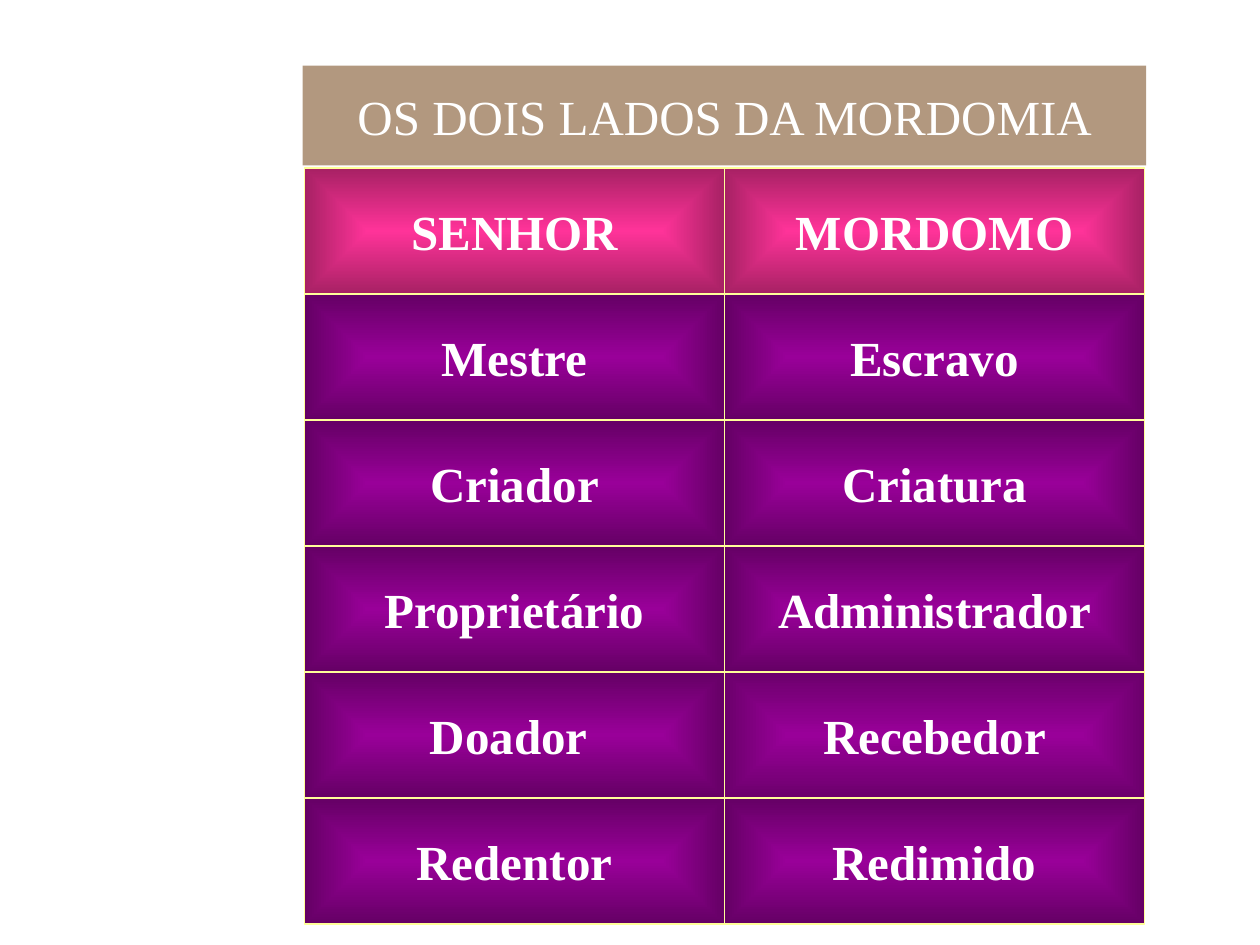
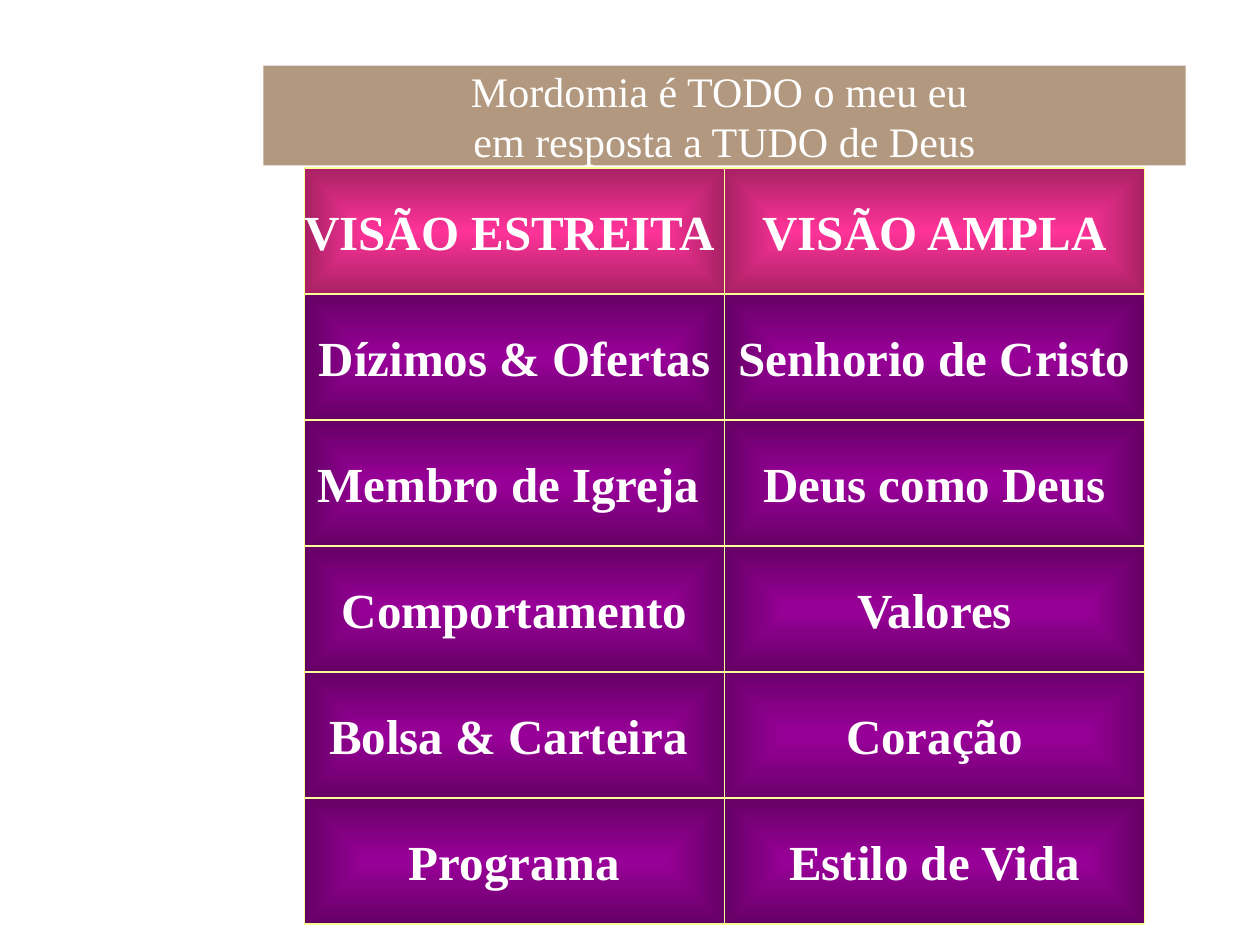
"""Build two slides that contrast the sides of stewardship in a two-column grid."""
from dataclasses import dataclass

import pptx
import pptx.dml.color
import pptx.enum.shapes
import pptx.enum.text
import pptx.oxml
import pptx.oxml.ns
import pptx.slide
import pptx.util

Pt = pptx.util.Pt
RGBColor = pptx.dml.color.RGBColor

WHITE = RGBColor(0xFF, 0xFF, 0xFF)
BROWN = RGBColor(0x66, 0x33, 0x00)
PINK = RGBColor(0xFF, 0x33, 0x99)
PURPLE = RGBColor(0x99, 0x00, 0x99)
CREAM = RGBColor(0xFF, 0xFF, 0x99)

FONT = "Times New Roman"
GRID_LEFT, GRID_TOP = 174, 96
CELL_WIDTH, CELL_HEIGHT = 240, 72
TITLE_TOP, TITLE_HEIGHT = 37.5, 57


@dataclass(frozen=True)
class CellStyle:
    """Centre colour of a cell and the shade, in percent, of its edge."""

    color: RGBColor
    edge_shade: int


@dataclass(frozen=True)
class Comparison:
    """Title band and rows of one slide; the first row is the heading."""

    title: str
    title_size: int
    title_width: float
    rows: tuple[tuple[str, str], ...]


HEADING = CellStyle(PINK, 38)
BODY = CellStyle(PURPLE, 39)
LIGHTER_BODY = CellStyle(PURPLE, 45)
LIGHTER_POSITION = (4, 1)

COMPARISONS = (
    Comparison("OS DOIS LADOS DA MORDOMIA", 28, 482, (
        ("SENHOR", "MORDOMO"),
        ("Mestre", "Escravo"),
        ("Criador", "Criatura"),
        ("Proprietário", "Administrador"),
        ("Doador ", "Recebedor"),
        ("Redentor", "Redimido"),
    )),
    Comparison("Mordomia é TODO o meu eu \vem resposta a TUDO de Deus", 24, 527, (
        ("VISÃO ESTREITA ", "VISÃO AMPLA"),
        ("Dízimos & Ofertas", "Senhorio de Cristo"),
        ("Membro de Igreja ", "Deus como Deus"),
        ("Comportamento", "Valores"),
        ("Bolsa & Carteira ", "Coração"),
        ("Programa", "Estilo de Vida"),
    )),
)


def write_text(sp, text: str, size: int, bold: bool, wrap: bool) -> None:
    """Put centred white text in a shape."""
    tf = sp.text_frame
    tf.auto_size = pptx.enum.text.MSO_AUTO_SIZE.NONE
    tf.word_wrap = wrap
    tf.vertical_anchor = pptx.enum.text.MSO_ANCHOR.MIDDLE
    p = tf.paragraphs[0]
    p.text = text
    p.alignment = pptx.enum.text.PP_ALIGN.CENTER
    for r in p.runs:
        r.font.name = FONT
        r.font.size = Pt(size)
        r.font.bold = bold
        r.font.color.rgb = WHITE


def fill_gradient(sp, style: CellStyle) -> None:
    """Fill a shape with a gradient that darkens from its centre to its edge."""
    sp.fill.gradient()
    old = sp._element.spPr.find(pptx.oxml.ns.qn("a:gradFill"))
    new = pptx.oxml.parse_xml(
        f'<a:gradFill {pptx.oxml.ns.nsdecls("a")} rotWithShape="0"><a:gsLst>'
        f'<a:gs pos="0"><a:srgbClr val="{style.color}"/></a:gs>'
        f'<a:gs pos="100000"><a:srgbClr val="{style.color}">'
        f'<a:shade val="{style.edge_shade * 1000}"/></a:srgbClr></a:gs></a:gsLst>'
        '<a:path path="shape"><a:fillToRect l="50000" t="50000" r="50000" b="50000"/>'
        '</a:path></a:gradFill>'
    )
    old.getparent().replace(old, new)


def add_cell(s: pptx.slide.Slide, row: int, col: int, text: str) -> None:
    """Draw one cell of the grid."""
    sp = s.shapes.add_shape(
        pptx.enum.shapes.MSO_SHAPE.RECTANGLE,
        Pt(GRID_LEFT + col * CELL_WIDTH), Pt(GRID_TOP + row * CELL_HEIGHT),
        Pt(CELL_WIDTH), Pt(CELL_HEIGHT),
    )
    sp.shadow.inherit = False
    if row == 0:
        style = HEADING
    else:
        style = LIGHTER_BODY if (row, col) == LIGHTER_POSITION else BODY
    fill_gradient(sp, style)
    sp.line.color.rgb = CREAM
    sp.line.width = Pt(0.75)
    write_text(sp, text, size=28, bold=True, wrap=False)


def format_title(s: pptx.slide.Slide, comparison: Comparison) -> None:
    """Turn the title placeholder into a translucent band centred on the grid."""
    sp = s.shapes.title
    center = GRID_LEFT + CELL_WIDTH
    sp.left, sp.top = Pt(center - comparison.title_width / 2), Pt(TITLE_TOP)
    sp.width, sp.height = Pt(comparison.title_width), Pt(TITLE_HEIGHT)
    sp.fill.solid()
    sp.fill.fore_color.rgb = BROWN
    color = sp._element.spPr.find(".//" + pptx.oxml.ns.qn("a:srgbClr"))
    color.append(pptx.oxml.parse_xml(
        f'<a:alpha {pptx.oxml.ns.nsdecls("a")} val="50000"/>'))
    write_text(sp, comparison.title, comparison.title_size, bold=False, wrap=True)


def main() -> None:
    """Build and save the presentation."""
    prs = pptx.Presentation()
    prs.slide_width, prs.slide_height = Pt(720), Pt(540)
    for comparison in COMPARISONS:
        s = prs.slides.add_slide(prs.slide_layouts.get_by_name("Title Only"))
        format_title(s, comparison)
        for row, texts in enumerate(comparison.rows):
            for col, text in enumerate(texts):
                add_cell(s, row, col, text)
    prs.save("out.pptx")


if __name__ == "__main__":
    main()
